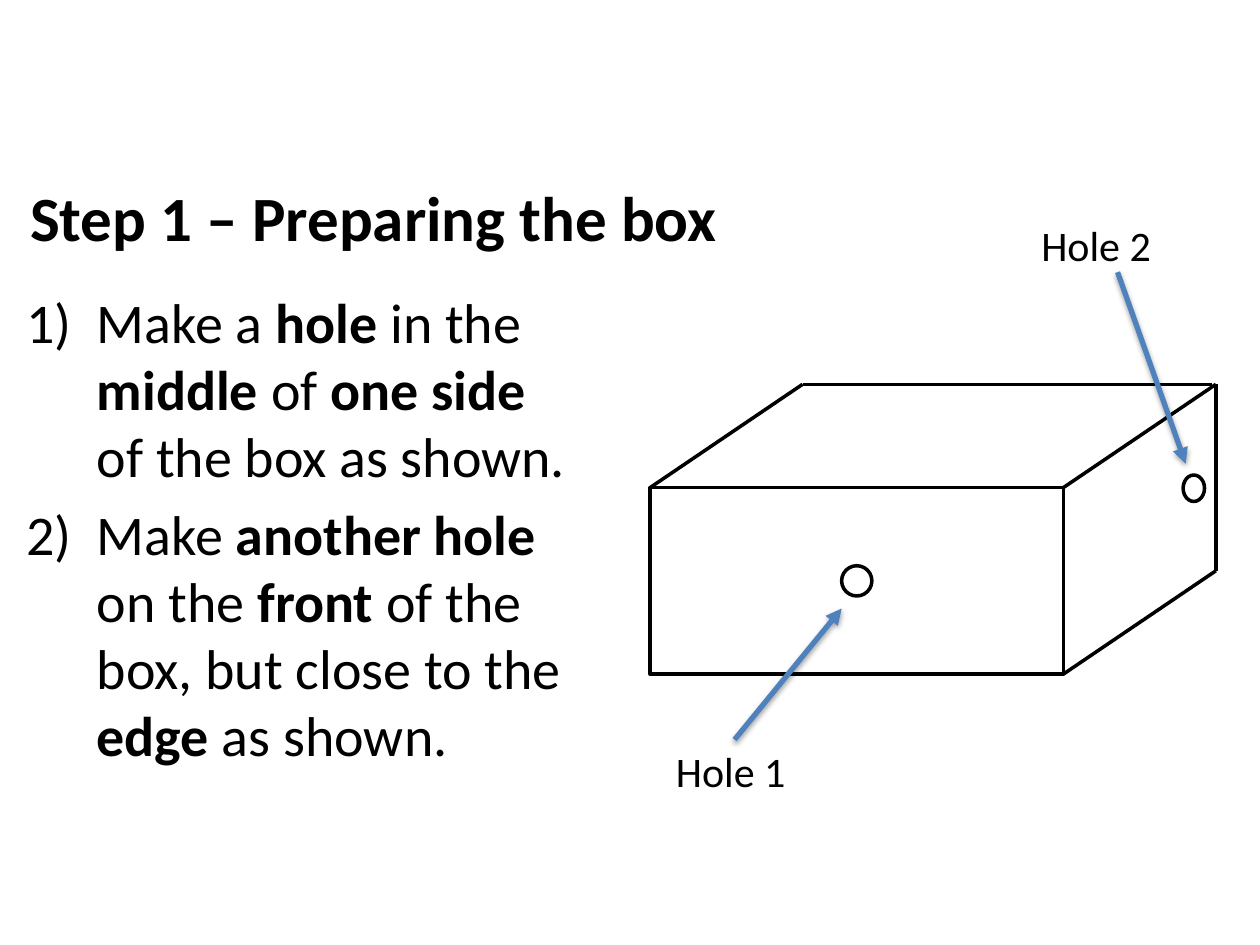
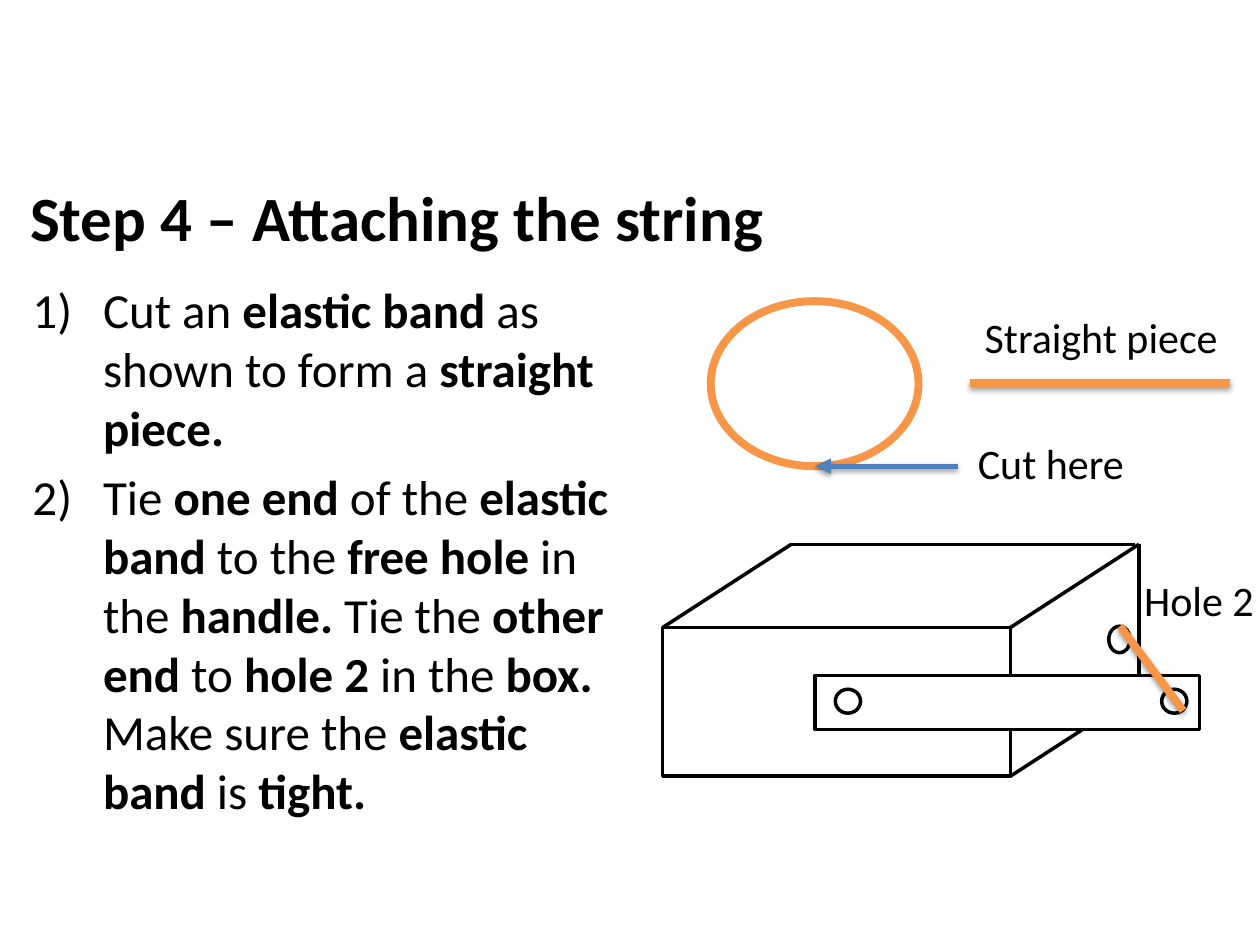
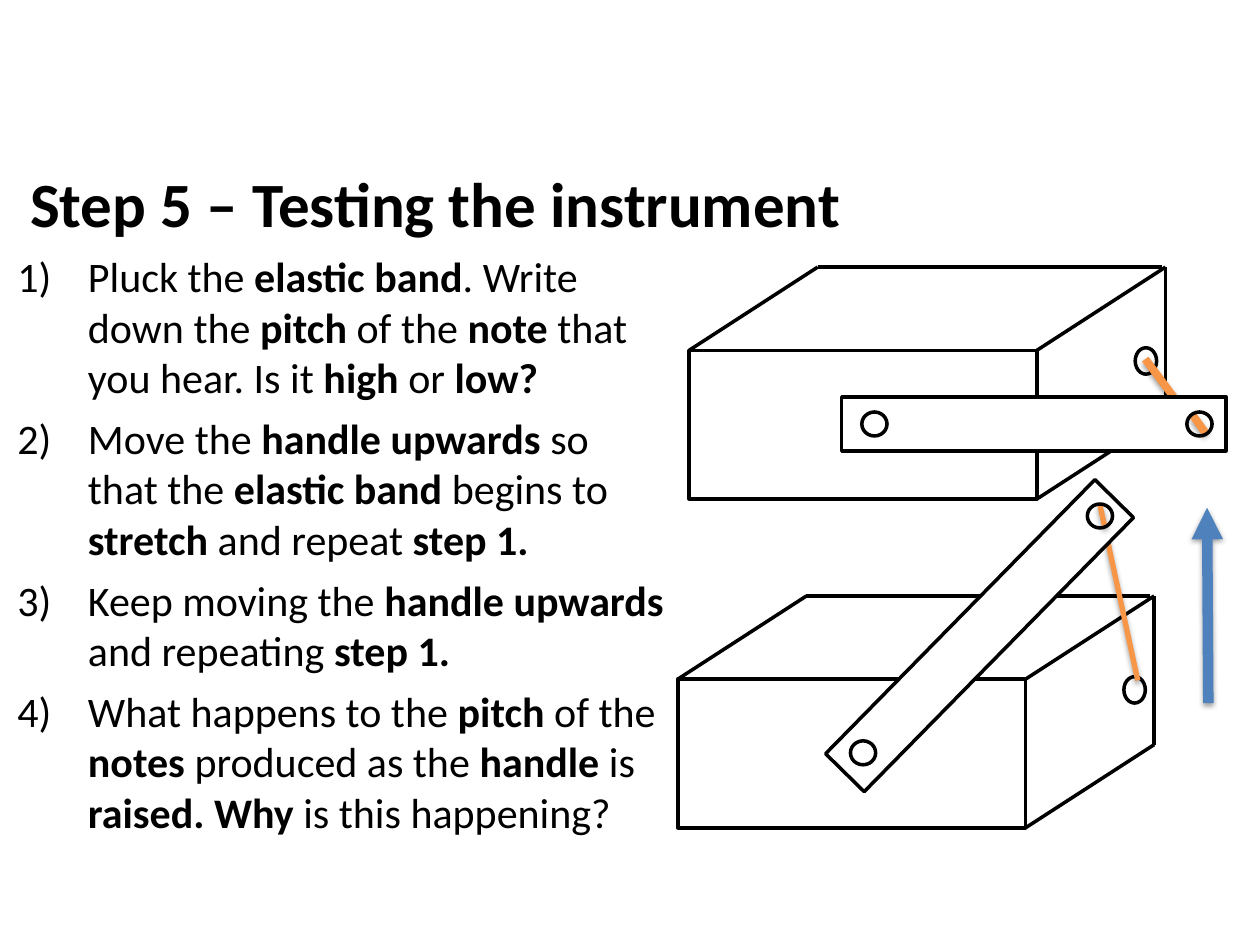
from dataclasses import dataclass
from functools import singledispatch

from lxml.etree import SubElement as Sub
from pptx import Presentation
from pptx.dml.color import RGBColor as Rgb
from pptx.enum.shapes import MSO_CONNECTOR as Link
from pptx.enum.shapes import MSO_SHAPE as Kind
from pptx.enum.text import PP_ALIGN as Align
from pptx.oxml.ns import qn
from pptx.util import Emu, Pt

PX = 9144
FONT = "Calibri"
HUES = {"ink": "000000", "paper": "FFFFFF", "arrow": "4F81BD", "band": "F79646"}


@dataclass(frozen=True)
class Cube:
    """A box seen from the right: front face and depth."""
    x: int
    y: int
    w: int = 276
    h: int = 118
    dx: int = 102
    dy: int = 66


@dataclass(frozen=True)
class Bar:
    """The cardboard handle."""
    x: int
    y: int
    turn: float = 0


@dataclass(frozen=True)
class Oval:
    """A hole, or the uncut elastic band."""
    x: int
    y: int
    w: int = 20
    h: int = 19
    hue: str = "ink"
    pt: float = 2
    fill: bool = True


@dataclass(frozen=True)
class Line:
    """A straight line with a soft shadow, or an arrow."""
    x1: int
    y1: int
    x2: int
    y2: int
    hue: str = "band"
    pt: float = 4.5


@dataclass(frozen=True)
class Label:
    """A centred caption."""
    x: int
    y: int
    w: int
    text: str


@dataclass(frozen=True)
class Page:
    """One step: its title, numbered tasks and drawing."""
    title: str
    top: int
    box: tuple[int, int, int, int]
    size: int
    tasks: tuple[str, ...]
    items: tuple


def px(*nums: int) -> list[Emu]:
    """Turn px into EMU."""
    return [Emu(n * PX) for n in nums]


def rgb(hue: str) -> Rgb:
    """Look up a colour."""
    return Rgb.from_string(HUES[hue])


def add_text(shapes, box: tuple, size: int, paras: tuple, align=Align.LEFT, listed: bool = False) -> None:
    """Add a text box; words between stars are bold."""
    frame = shapes.add_textbox(*px(*box)).text_frame
    frame.word_wrap = True
    for i, words in enumerate(paras):
        para = frame.paragraphs[0] if i == 0 else frame.add_paragraph()
        para.alignment = align
        if listed:
            para.space_after = Pt(6)
            props = para._p.get_or_add_pPr()
            props.set("marL", str(56 * PX))
            props.set("indent", str(-56 * PX))
            Sub(props, qn("a:buFont"), typeface="+mj-lt")
            Sub(props, qn("a:buAutoNum"), type="arabicParenR")
        for k, piece in enumerate(words.split("*")):
            if piece:
                run = para.add_run()
                run.text = piece
                font = run.font
                font.name, font.size, font.bold = FONT, Pt(size), k % 2 == 1
                font.color.rgb = rgb("ink")


def add_form(shapes, kind: Kind, box: tuple, hue: str = "ink", pt: float = 2, fill: bool = True):
    """Add an outlined shape."""
    form = shapes.add_shape(kind, *px(*box))
    form.shadow.inherit = False
    if fill:
        form.fill.solid()
        form.fill.fore_color.rgb = rgb("paper")
    else:
        form.fill.background()
    form.line.color.rgb = rgb(hue)
    form.line.width = Pt(pt)
    return form


def add_line(shapes, ends: tuple, hue: str = "ink", pt: float = 2):
    """Add a straight line and return its empty effect list."""
    link = shapes.add_connector(Link.STRAIGHT, *px(*ends))
    link.line.color.rgb = rgb(hue)
    link.line.width = Pt(pt)
    if hue == "arrow":
        Sub(link.line._get_or_add_ln(), qn("a:tailEnd"), type="triangle")
    return Sub(link._element.spPr, qn("a:effectLst"))


@singledispatch
def draw(item, shapes) -> None:
    """Draw one item of a page."""
    raise TypeError(item)


@draw.register
def _(item: Cube, shapes) -> None:
    """Draw the front face and the five edges behind it."""
    group = shapes.add_group_shape().shapes
    left, right = item.x, item.x + item.w
    top, base = item.y, item.y + item.h
    far, back = right + item.dx, top - item.dy
    add_form(group, Kind.RECTANGLE, (left, top, item.w, item.h))
    for ends in (
        (left, top, left + item.dx, back),
        (right, top, far, back),
        (left + item.dx, back, far - 3, back),
        (right, base, far, base - item.dy),
        (far, base - item.dy, far, back),
    ):
        add_line(group, ends)


@draw.register
def _(item: Bar, shapes) -> None:
    """Draw the handle."""
    add_form(shapes, Kind.RECTANGLE, (item.x, item.y, 305, 43)).rotation = item.turn


@draw.register
def _(item: Oval, shapes) -> None:
    """Draw a hole or band."""
    add_form(shapes, Kind.OVAL, (item.x, item.y, item.w, item.h), item.hue, item.pt, item.fill)


@draw.register
def _(item: Line, shapes) -> None:
    """Draw a line with its shadow."""
    glow = add_line(shapes, (item.x1, item.y1, item.x2, item.y2), item.hue, item.pt)
    shade = Sub(glow, qn("a:outerShdw"), blurRad="40000", dist="20000", dir="5400000", rotWithShape="0")
    Sub(Sub(shade, qn("a:srgbClr"), val=HUES["ink"]), qn("a:alpha"), val="38000")


@draw.register
def _(item: Label, shapes) -> None:
    """Draw a caption."""
    add_text(shapes, (item.x, item.y, item.w, 50), 24, (item.text,), Align.CENTER)


PAGES = (
    Page(
        "Step 1 – Preparing the box", 137, (11, 223, 458, 395), 32,
        (
            "Make a *hole* in the *middle* of *one side* of the box as shown.",
            "Make *another hole *on the *front *of the box, but close to the *edge* as shown.",
        ),
        (
            Cube(516, 387, 328, 148, 121, 82),
            Oval(668, 449, 24, 24),
            Label(523, 587, 114, "Hole 1"),
            Line(583, 587, 668, 483, "arrow", 3),
            Label(815, 169, 110, "Hole 2"),
            Line(887, 216, 941, 368, "arrow", 3),
            Oval(939, 377, 17, 21),
        ),
    ),
    Page(
        "Step 4 – Attaching the string", 137, (16, 217, 484, 498), 28,
        (
            "Cut an *elastic band *as shown to form a *straight piece.*",
            "Tie *one end *of the *elastic band* to the *free hole *in the *handle.* Tie the "
            "*other end *to *hole 2 *in the *box. *Make sure the *elastic band* is *tight.*",
        ),
        (
            Cube(526, 498),
            Bar(647, 536),
            Oval(922, 547),
            Oval(663, 547),
            Oval(880, 497, 17, 21),
            Line(939, 564, 889, 497),
            Label(897, 451, 109, "Hole 2"),
            Oval(564, 239, 165, 131, "band", 4.5),
            Line(976, 304, 770, 304),
            Line(760, 370, 647, 370, "arrow", 3),
            Label(737, 342, 194, "Cut here"),
            Label(768, 242, 212, "Straight piece"),
        ),
    ),
    Page(
        "Step 5 – Testing the instrument", 126, (4, 194, 533, 480), 24,
        (
            "Pluck the *elastic band*. Write down the *pitch* of the *note* that you hear. "
            "Is it *high* or *low?*",
            "Move the *handle upwards *so that the *elastic band *begins to *stretch* and repeat *step 1.*",
            "Keep moving the *handle upwards *and repeating *step 1.*",
            "What happens to the *pitch* of the *notes *produced as the *handle* is "
            "*raised. Why* is this happening?",
        ),
        (
            Cube(547, 278),
            Oval(901, 276, 17, 21),
            Line(959, 352, 909, 285),
            Cube(538, 539),
            Oval(892, 537, 17, 21),
            Line(903, 540, 873, 401, pt=3),
            Line(959, 558, 958, 403, "arrow", 6),
            Bar(668, 315),
            Line(957, 344, 947, 330),
            Bar(625, 483, 314.5),
            Oval(684, 327),
            Oval(675, 588),
            Line(877, 419, 873, 401, pt=3),
            Oval(863, 400, fill=False),
            Oval(942, 327, fill=False),
        ),
    ),
)


def main() -> None:
    """Build the deck."""
    deck = Presentation()
    deck.slide_width, deck.slide_height = px(1000, 750)
    for page in PAGES:
        shapes = deck.slides.add_slide(deck.slide_layouts[6]).shapes
        add_text(shapes, (14, page.top, 959, 71), 36, (f"*{page.title}*",))
        add_text(shapes, page.box, page.size, page.tasks, listed=True)
        for item in page.items:
            draw(item, shapes)
    deck.save("out.pptx")


if __name__ == "__main__":
    main()
